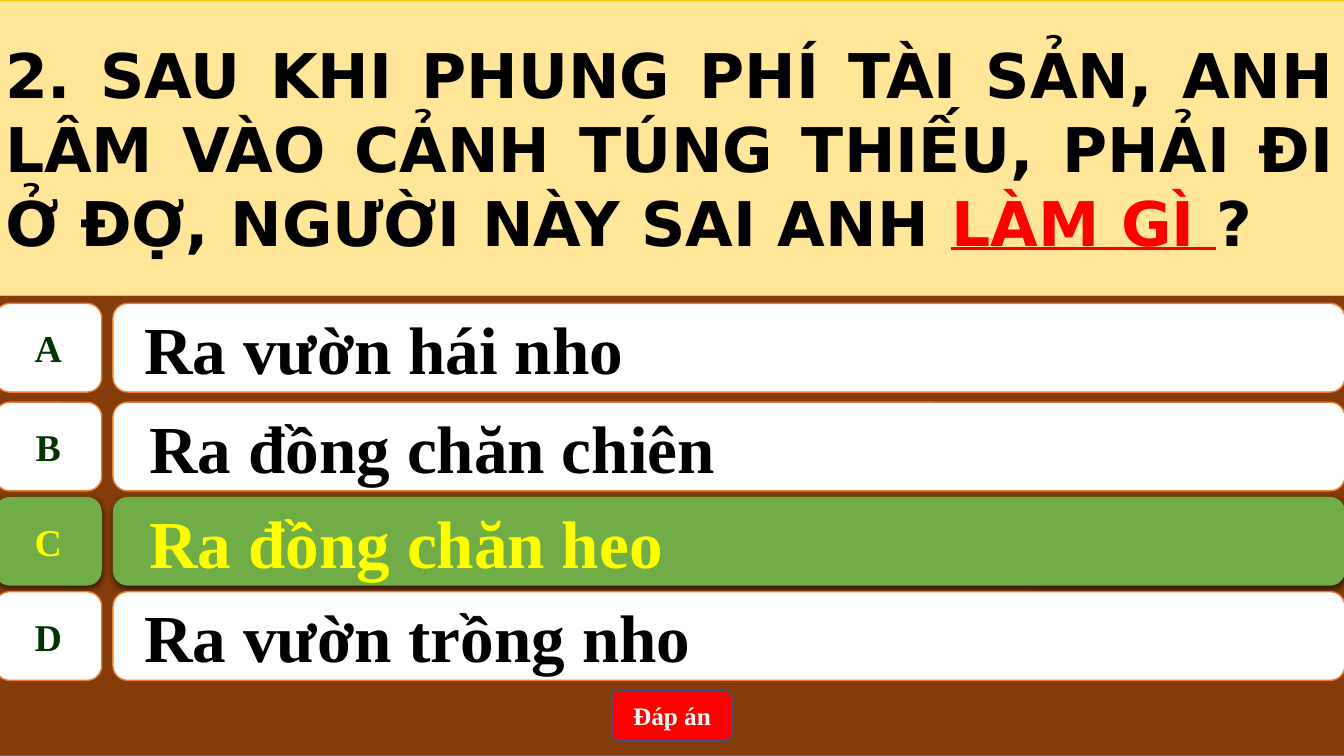
import pptx
import pptx.util
import pptx.dml.color
import pptx.enum.shapes
import pptx.enum.text
import pptx.oxml.ns
import lxml.etree
from dataclasses import dataclass

Inches, Pt = pptx.util.Inches, pptx.util.Pt
SHAPE = pptx.enum.shapes.MSO_SHAPE
ALIGN = pptx.enum.text.PP_ALIGN


@dataclass(frozen=True)
class Theme:
    brown: str = "843C0B"
    blue: str = "43739E"
    cream: str = "FFE699"
    gold: str = "FFC000"
    white: str = "FFFFFF"
    black: str = "000000"
    orange: str = "ED7D31"
    dark_green: str = "003300"
    green: str = "70AD47"
    yellow: str = "FFFF00"
    red: str = "FF0000"
    navy: str = "325491"
    serif: str = "Times New Roman"
    sans: str = "DejaVu Sans"
    question: int = 44
    answer: int = 48
    letter: int = 27
    button: int = 18


T = Theme()
rgb = pptx.dml.color.RGBColor.from_string


def paint(sp, fill, line=None, width=1):
    sp.fill.solid()
    sp.fill.fore_color.rgb = rgb(fill)
    if line:
        sp.line.color.rgb = rgb(line)
        sp.line.width = Pt(width)
    else:
        sp.line.fill.background()


def add_box(s, kind, box, fill, line=None):
    sp = s.shapes.add_shape(kind, *map(Inches, box))
    sp.shadow.inherit = False
    paint(sp, fill, line)
    return sp


def start_text(sp, align, wrap=True):
    tf = sp.text_frame
    tf.word_wrap = wrap
    tf.auto_size = pptx.enum.text.MSO_AUTO_SIZE.NONE
    tf.vertical_anchor = pptx.enum.text.MSO_ANCHOR.MIDDLE
    p = tf.paragraphs[0]
    p.alignment = align
    return p


def add_run(p, text, size, color, font=T.serif, underline=None):
    r = p.add_run()
    r.text = text
    r.font.name, r.font.size, r.font.bold = font, Pt(size), True
    r.font.underline = underline
    r.font.color.rgb = rgb(color)


def add_shadow(sp):
    qn = pptx.oxml.ns.qn
    effects = sp.element.spPr.find(qn("a:effectLst"))
    shadow = lxml.etree.SubElement(
        effects, qn("a:outerShdw"), blurRad=str(Pt(4.5)), dist=str(Pt(1.5)),
        dir="5400000", algn="ctr", rotWithShape="0")
    color = lxml.etree.SubElement(shadow, qn("a:srgbClr"), val=T.black)
    lxml.etree.SubElement(color, qn("a:alpha"), val="63000")


def add_question(s, box):
    title = s.shapes.title
    title.left, title.top, title.width, title.height = map(Inches, box)
    # Bring the title in front of the backdrop
    title.element.getparent().append(title.element)
    paint(title, T.cream, T.gold, 0.5)
    p = start_text(title, ALIGN.JUSTIFY)
    for text, color, underline in (
            ("2. SAU KHI PHUNG PHÍ TÀI SẢN, ANH LÂM VÀO CẢNH TÚNG THIẾU, "
             "PHẢI ĐI Ở ĐỢ, NGƯỜI NÀY SAI ANH ", T.black, None),
            ("LÀM GÌ ", T.red, True),
            ("?", T.black, None)):
        add_run(p, text, T.question, color, T.sans, underline)


def add_answer(s, box, letter, text, indent, correct):
    x, y, w, h = box
    letter_w, gap = 1.06, 0.11
    fill, line = (T.green, None) if correct else (T.white, T.orange)

    # Answer bar
    bar_x = letter_w + gap
    bar = add_box(s, SHAPE.ROUNDED_RECTANGLE, (x + bar_x, y, w - bar_x, h), fill, line)
    p = start_text(bar, ALIGN.LEFT)
    p._p.get_or_add_pPr().set("marL", str(Inches(indent)))
    add_run(p, text, T.answer, T.yellow if correct else T.black)

    # Letter tile
    tile = add_box(s, SHAPE.FLOWCHART_ALTERNATE_PROCESS, (x, y, letter_w, h), fill, line)
    p = start_text(tile, ALIGN.CENTER, wrap=False)
    add_run(p, letter, T.letter, T.yellow if correct else T.dark_green)

    if correct:
        add_shadow(bar)
        add_shadow(tile)


def add_button(s, box):
    button = add_box(s, SHAPE.ROUNDED_RECTANGLE, box, T.red, T.navy)
    add_run(start_text(button, ALIGN.CENTER), "Đáp án", T.button, T.white)


def quiz_slide(prs):
    s = prs.slides.add_slide(prs.slide_layouts[5])
    left, width = -0.05, 13.39
    add_box(s, SHAPE.RECTANGLE, (left, 0, width, 7.5), T.brown, T.blue)
    add_question(s, (left, 0, width, 2.93))
    answers = (("A", "Ra vườn hái nho", 3.01, 0.17),
               ("B", "Ra đồng chăn chiên", 3.99, 0.22),
               ("C", "Ra đồng chăn heo", 4.93, 0.22),
               ("D", "Ra vườn trồng nho", 5.87, 0.17))
    for letter, text, top, indent in answers:
        add_answer(s, (left, top, width, 0.88), letter, text, indent, letter == "C")
    add_button(s, (6.07, 6.85, 1.19, 0.5))


def main():
    prs = pptx.Presentation()
    prs.slide_width, prs.slide_height = Inches(13.33), Inches(7.5)
    quiz_slide(prs)
    prs.save("out.pptx")


if __name__ == "__main__":
    main()
